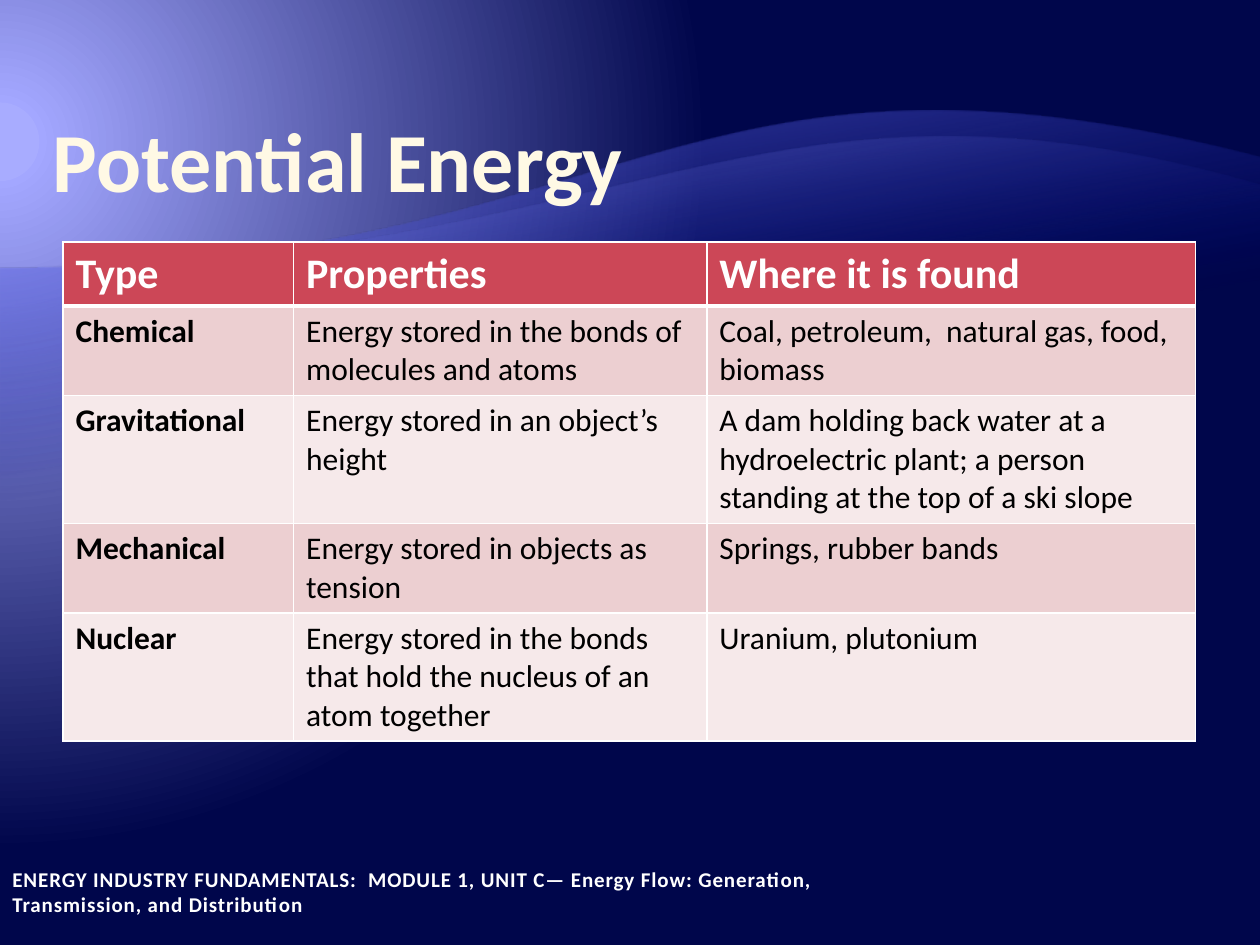
from lxml import etree
from pptx import Presentation
from pptx.dml.color import RGBColor
from pptx.enum.text import MSO_ANCHOR, PP_ALIGN
from pptx.oxml import parse_xml
from pptx.oxml.ns import nsdecls, qn
from pptx.util import Inches, Pt

LEFT = PP_ALIGN.LEFT
BOTTOM = MSO_ANCHOR.BOTTOM

COLORS = {
    "white": "FFFFFF", "black": "000000", "cream": "FFF9E5",
    "header": "CC4757", "band_dark": "ECCFD1", "band_light": "F6E9EA",
    "glow_core": "A8ACFF", "glow": "A3A7FF", "night": "00064B",
    "wave_base": "000D9E", "wave_crest": "797FFF",
}

ENERGY_TYPES = [
    ("Type", "Properties", "Where it is found"),
    ("Chemical", "Energy stored in the bonds of molecules and atoms",
     "Coal, petroleum,  natural gas, food, biomass"),
    ("Gravitational", "Energy stored in an object’s height",
     "A dam holding back water at a hydroelectric plant; "
     "a person standing at the top of a ski slope"),
    ("Mechanical", "Energy stored in objects as tension", "Springs, rubber bands"),
    ("Nuclear", "Energy stored in the bonds that hold the nucleus of an atom together",
     "Uranium, plutonium"),
]


class SlideBuilder:
    font_name = "Calibri"

    def __init__(self, slide):
        self.slide = slide

    def style(self, paragraph, size, color, bold=True):
        paragraph.alignment = LEFT
        font = paragraph.font
        font.name = self.font_name
        font.size = Pt(size)
        font.bold = bold
        font.color.rgb = RGBColor.from_string(COLORS[color])
        return font

    def gradient(self, element, stops, direction):
        stop_xml = "".join(
            f'<a:gs pos="{position * 1000}"><a:srgbClr val="{COLORS[color]}">'
            f'<a:alpha val="{opacity * 1000}"/></a:srgbClr></a:gs>'
            for position, color, opacity in stops)
        gradient = parse_xml(
            f'<a:gradFill {nsdecls("a")} rotWithShape="1">'
            f'<a:gsLst>{stop_xml}</a:gsLst>{direction}</a:gradFill>')
        solid = next(element.iter(qn("a:solidFill")))
        solid.getparent().replace(solid, gradient)

    def backdrop(self):
        self.slide.background.fill.solid()
        self.gradient(
            self.slide.element,
            [(5, "glow_core", 100), (5, "glow", 100), (90, "night", 100)],
            '<a:path path="circle"><a:fillToRect l="20000" t="30000" '
            'r="135000" b="100000"/></a:path>')

    def wave(self, bottom, start, controls, end, crest, opacity):
        corners = [(0, bottom), start, end]
        builder = self.slide.shapes.build_freeform(Inches(10), Inches(bottom))
        builder.add_line_segments([(Inches(x), Inches(y)) for x, y in corners])
        wave = builder.convert_to_shape()
        wave.shadow.inherit = False
        wave.line.fill.background()
        wave.fill.solid()
        self.gradient(wave.element, [(65, "wave_base", 0), (100, crest, opacity)],
                      '<a:lin ang="15600000" scaled="0"/>')
        edge = list(wave.element.iter(qn("a:lnTo")))[2]
        curve = etree.Element(qn("a:cubicBezTo"))
        for x, y in (*controls, end):
            etree.SubElement(curve, qn("a:pt"), x=str(Inches(x)),
                             y=str(Inches(y) - Inches(end[1])))
        edge.getparent().replace(edge, curve)

    def footer(self, text, left, top, width, height):
        box = self.slide.shapes.add_textbox(
            Inches(left), Inches(top), Inches(width), Inches(height))
        box.text_frame.word_wrap = True
        paragraph = box.text_frame.paragraphs[0]
        run = paragraph.add_run()
        run.text = text
        self.style(paragraph, 12, "white")
        run.font._element.set("spc", "50")

    def title(self, text, left, top, width, height):
        title = self.slide.shapes.title
        self.slide.shapes._spTree.append(title.element)
        title.left, title.top = Inches(left), Inches(top)
        title.width, title.height = Inches(width), Inches(height)
        frame = title.text_frame
        frame.text = text
        frame.vertical_anchor = BOTTOM
        frame.margin_left = frame.margin_right = 0
        frame.margin_top = frame.margin_bottom = Inches(0.01)
        self.style(frame.paragraphs[0], 48, "cream")

    def borders(self, cell, top, bottom):
        properties = cell._tc.get_or_add_tcPr()
        widths = {"lnL": 1, "lnR": 1, "lnT": top, "lnB": bottom}
        for index, (side, width) in enumerate(widths.items()):
            properties.insert(index, parse_xml(
                f'<a:{side} {nsdecls("a")} w="{Pt(width)}"><a:solidFill>'
                f'<a:srgbClr val="{COLORS["white"]}"/></a:solidFill></a:{side}>'))

    def table(self, rows, left, top, column_widths, row_height, height):
        frame = self.slide.shapes.add_table(
            len(rows), len(column_widths), Inches(left), Inches(top),
            Inches(sum(column_widths)), Inches(row_height * len(rows)))
        table = frame.table
        for column, width in zip(table.columns, column_widths):
            column.width = Inches(width)
        for row_index, texts in enumerate(rows):
            table.rows[row_index].height = Inches(row_height)
            is_header = row_index == 0
            band = "band_dark" if row_index % 2 else "band_light"
            for column_index, text in enumerate(texts):
                cell = table.cell(row_index, column_index)
                cell.text = text
                cell.fill.solid()
                cell.fill.fore_color.rgb = RGBColor.from_string(
                    COLORS["header" if is_header else band])
                self.style(cell.text_frame.paragraphs[0], 24 if is_header else 18,
                           "white" if is_header else "black",
                           is_header or column_index == 0)
                self.borders(cell, 3 if row_index == 1 else 1, 3 if is_header else 1)
        frame.height = Inches(height)


def main():
    presentation = Presentation()
    presentation.slide_width, presentation.slide_height = Inches(10), Inches(7.5)
    builder = SlideBuilder(
        presentation.slides.add_slide(presentation.slide_layouts[5]))
    builder.backdrop()
    builder.wave(7.33, (0, 2.13), [(5, 2.13), (5.34, 0.05)], (10, 1.25),
                 "wave_crest", 55)
    builder.wave(6.37, (0, 2.13), [(5, 2.13), (5.98, 0.31)], (10, 1.47),
                 "glow", 30)
    builder.footer("ENERGY INDUSTRY FUNDAMENTALS:  MODULE 1, UNIT C— Energy Flow: "
                   "Generation, Transmission, and Distribution", 0, 6.83, 7.58, 0.5)
    builder.title("Potential Energy", 0.42, 0.67, 9, 1)
    builder.table(ENERGY_TYPES, 0.5, 1.92, [1.83, 3.28, 3.88], 0.41, 3.9)
    presentation.save("out.pptx")


if __name__ == "__main__":
    main()
